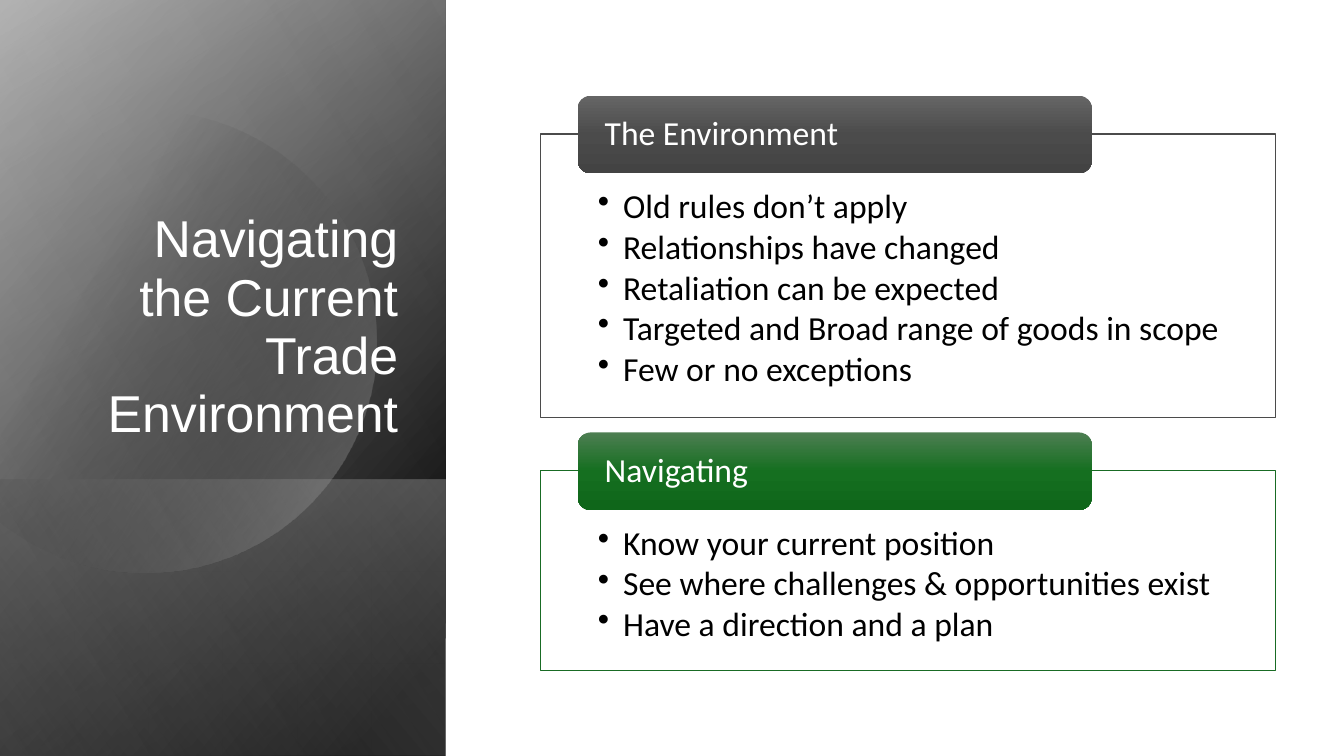
import math

import lxml.etree
import pptx
import pptx.dml.color
import pptx.enum.shapes
import pptx.enum.text
import pptx.oxml.ns
import pptx.util
from pptx.util import Inches

qn = pptx.oxml.ns.qn
SHAPE = pptx.enum.shapes.MSO_SHAPE
ANCHOR = pptx.enum.text.MSO_ANCHOR
ALIGN = pptx.enum.text.PP_ALIGN

BAND_WIDTH = 4.42
SLIDE_HEIGHT = 7.5

# Gradient stops: position in percent, colour, opacity in percent
BASE_STOPS = [(8, "000000", 100), (100, "9E9E9E", 100)]
SHEEN_STOPS = [(0, "000000", 0), (99, "D3D3D3", 46)]
FOOT_STOPS = [(2, "D3D3D3", 29), (100, "000000", 30)]
DISC_STOPS = [(29, "000000", 0), (100, "D3D3D3", 43)]
GLOSS_STOPS = [(0, "000000", 0), (99, "E5E5E5", 11)]

# Heading, points, top, height, outline, header gradient
SECTIONS = [
    ("The Environment",
     ["Old rules don’t apply", "Relationships have changed", "Retaliation can be expected",
      "Targeted and Broad range of goods in scope", "Few or no exceptions"],
     1.33, 2.81, "4B4B4B",
     [(0, "656565", 100), (50, "4B4B4B", 100), (100, "434343", 100)]),
    ("Navigating",
     ["Know your current position", "See where challenges & opportunities exist",
      "Have a direction and a plan"],
     4.67, 1.98, "196B24",
     [(0, "4D7E52", 100), (50, "156F20", 100), (100, "0F661A", 100)]),
]


def color(value):
    return pptx.dml.color.RGBColor.from_string(value)


def fill_gradient(shape, stops, angle):
    """Fill with stops along an angle measured clockwise."""
    shape.fill.gradient()
    shape.fill.gradient_angle = 360 - angle
    stop_list = shape.element.spPr.find(qn("a:gradFill")).find(qn("a:gsLst"))
    stop_list.clear()
    for position, value, opacity in stops:
        stop = lxml.etree.SubElement(stop_list, qn("a:gs"), pos=str(position * 1000))
        rgb = lxml.etree.SubElement(stop, qn("a:srgbClr"), val=value)
        if opacity < 100:
            lxml.etree.SubElement(rgb, qn("a:alpha"), val=str(opacity * 1000))
    shape.line.fill.background()
    shape.shadow.inherit = False


def add_band(slide, top, stops, angle):
    """Add a quarter-turned, mirrored rectangle from top to the slide's foot."""
    length = SLIDE_HEIGHT - top
    shape = slide.shapes.add_shape(
        SHAPE.RECTANGLE, Inches((BAND_WIDTH - length) / 2),
        Inches(top + (length - BAND_WIDTH) / 2), Inches(length), Inches(BAND_WIDTH))
    shape.rotation = 90
    shape.element.spPr.xfrm.set("flipH", "1")
    fill_gradient(shape, stops, angle)


def add_disc(slide):
    """Add a circle cut off by the left edge of the slide."""
    center_x, center_y, radius = 1.44, 3.39, 2.29
    limit = math.acos(-center_x / radius)
    steps = 120
    angles = [limit * (2 * step / steps - 1) for step in range(steps + 1)]
    points = [(Inches(center_x + radius * math.cos(angle)),
               Inches(center_y + radius * math.sin(angle))) for angle in angles]
    builder = slide.shapes.build_freeform(*points[0])
    builder.add_line_segments(points[1:], close=True)
    fill_gradient(builder.convert_to_shape(), DISC_STOPS, 30)


def format_title(title):
    title.left, title.top = Inches(0.64), Inches(1.84)
    title.width, title.height = Inches(3.41), Inches(2.62)
    title.text = "Navigating the Current Trade Environment"
    frame = title.text_frame
    frame.word_wrap = True
    frame.auto_size = pptx.enum.text.MSO_AUTO_SIZE.NONE
    frame.vertical_anchor = ANCHOR.BOTTOM
    paragraph = frame.paragraphs[0]
    format_paragraph(paragraph, 37, "Arial", "FFFFFF")
    paragraph.alignment = ALIGN.RIGHT
    paragraph.line_spacing = 0.94
    title.element.getparent().append(title.element)


def format_paragraph(paragraph, size, font, value):
    paragraph.font.size = pptx.util.Pt(size)
    paragraph.font.name = font
    paragraph.font.color.rgb = color(value)
    paragraph.alignment = ALIGN.LEFT
    paragraph.line_spacing = 0.9


def add_bullet(paragraph):
    properties = paragraph._p.get_or_add_pPr()
    properties.set("marL", str(Inches(0.25)))
    properties.set("indent", str(Inches(-0.25)))
    bullet = lxml.etree.Element(qn("a:buChar"), char="•")
    properties.find(qn("a:defRPr")).addprevious(bullet)


def set_insets(frame, left, top, right, bottom):
    frame.margin_left, frame.margin_top = Inches(left), Inches(top)
    frame.margin_right, frame.margin_bottom = Inches(right), Inches(bottom)
    frame.word_wrap = True


def add_panel(slide, points, top, height, outline):
    panel = slide.shapes.add_shape(
        SHAPE.RECTANGLE, Inches(5.36), Inches(top), Inches(7.29), Inches(height))
    panel.shadow.inherit = False
    panel.fill.solid()
    panel.fill.fore_color.rgb = color("FFFFFF")
    panel.line.color.rgb = color(outline)
    panel.line.width = pptx.util.Pt(1)
    frame = panel.text_frame
    set_insets(frame, 0.57, 0.55, 0.4, 0.19)
    frame.vertical_anchor = ANCHOR.TOP
    frame.text = "\n".join(points)
    for paragraph in frame.paragraphs:
        format_paragraph(paragraph, 24, "Calibri", "000000")
        paragraph.space_after = pptx.util.Pt(3.2)
        add_bullet(paragraph)


def add_header(slide, heading, panel_top, stops):
    header = slide.shapes.add_shape(
        SHAPE.ROUNDED_RECTANGLE, Inches(5.73), Inches(panel_top - 0.38),
        Inches(5.1), Inches(0.77))
    fill_gradient(header, stops, 90)
    frame = header.text_frame
    set_insets(frame, 0.23, 0, 0.23, 0)
    frame.vertical_anchor = ANCHOR.MIDDLE
    frame.text = heading
    format_paragraph(frame.paragraphs[0], 24, "Calibri", "FFFFFF")


def main():
    presentation = pptx.Presentation()
    presentation.slide_width = Inches(13.33)
    presentation.slide_height = Inches(SLIDE_HEIGHT)
    slide = presentation.slides.add_slide(presentation.slide_layouts[5])
    add_band(slide, 0, BASE_STOPS, 50)
    add_band(slide, 0, SHEEN_STOPS, 30)
    add_band(slide, 4.76, FOOT_STOPS, 130)
    add_disc(slide)
    add_band(slide, 0, GLOSS_STOPS, 120)
    format_title(slide.shapes.title)
    for heading, points, top, height, outline, stops in SECTIONS:
        add_panel(slide, points, top, height, outline)
        add_header(slide, heading, top, stops)
    presentation.save("out.pptx")


if __name__ == "__main__":
    main()
